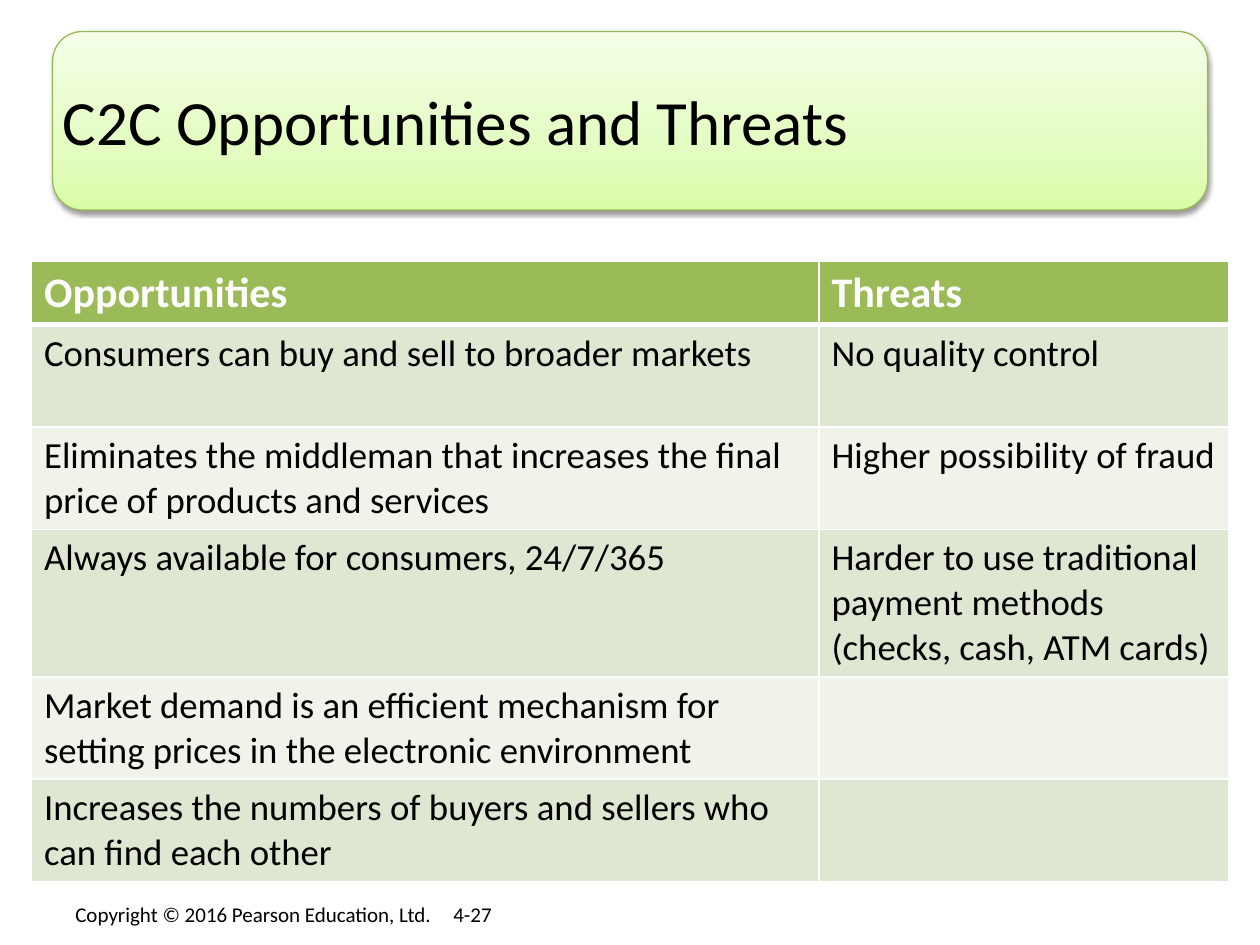
from copy import deepcopy

from lxml import etree
from pptx import Presentation
from pptx.dml.color import RGBColor
from pptx.enum.shapes import MSO_SHAPE
from pptx.enum.text import MSO_ANCHOR, MSO_AUTO_SIZE
from pptx.oxml.ns import qn
from pptx.util import Inches, Pt

ROUND = MSO_SHAPE.ROUNDED_RECTANGLE
MIDDLE = MSO_ANCHOR.MIDDLE
FIT = MSO_AUTO_SIZE.SHAPE_TO_FIT_TEXT

BLACK = RGBColor(0x00, 0x00, 0x00)
WHITE = RGBColor(0xFF, 0xFF, 0xFF)
GREEN = RGBColor(0x9B, 0xBB, 0x59)
EDGE = RGBColor(0x98, 0xB9, 0x55)
SAGE = RGBColor(0xDE, 0xE7, 0xD1)
PALE = RGBColor(0xEF, 0xF3, 0xEA)
GLOW = [(0, RGBColor(0xDA, 0xFD, 0xA7)),
        (0.35, RGBColor(0xE4, 0xFC, 0xC2)),
        (1, RGBColor(0xF5, 0xFF, 0xE7))]

HEADS = ["Opportunities", "Threats"]
POINTS = [
    ("Consumers can buy and sell to broader markets", "No quality control"),
    ("Eliminates the middleman that increases the final price of products and services",
     "Higher possibility of fraud"),
    ("Always available for consumers, 24/7/365",
     "Harder to use traditional payment methods (checks, cash, ATM cards)"),
    ("Market demand is an efficient mechanism for setting prices in the electronic environment", ""),
    ("Increases the numbers of buyers and sellers who can find each other", ""),
]


def add(node, tag, **attrs):
    return etree.SubElement(node, qn(tag), {key: str(val) for key, val in attrs.items()})


class Deck:
    """Hold the style and current slide, measured in quarter-inch grid units."""

    font = "Calibri"
    unit = 0.25

    def __init__(self, cols, rows):
        self.prs = Presentation()
        self.prs.slide_width = self.span(cols)
        self.prs.slide_height = self.span(rows)
        self.slide = self.prs.slides.add_slide(self.prs.slide_layouts[6])

    def span(self, count):
        return Inches(count * self.unit)

    def area(self, box):
        return [self.span(count) for count in box]

    def run(self, para, text, size, color, bold=False):
        run = para.add_run()
        run.text = text
        font = run.font
        font.name, font.size, font.bold = self.font, Pt(size), bold
        font.color.rgb = color

    def panel(self, box, stops, edge):
        shape = self.slide.shapes.add_shape(ROUND, *self.area(box))
        shape.fill.gradient()
        shape.fill.gradient_angle = 90
        nodes = shape._element.spPr.find(qn("a:gradFill")).find(qn("a:gsLst"))
        nodes.insert(1, deepcopy(nodes[0]))
        for stop, (place, color) in zip(shape.fill.gradient_stops, stops):
            stop.position, stop.color.rgb = place, color
        shape.line.color.rgb = edge
        shape.line.width = Pt(0.75)
        shape.shadow.inherit = False
        effects = shape._element.spPr.find(qn("a:effectLst"))
        shade = add(effects, "a:outerShdw", blurRad=Pt(3.1), dist=Pt(1.6),
                    dir=90 * 60000, rotWithShape=0)
        add(add(shade, "a:srgbClr", val=BLACK), "a:alpha", val=38000)

    def text(self, box, text, size, color):
        frame = self.slide.shapes.add_textbox(*self.area(box)).text_frame
        frame.word_wrap = True
        self.run(frame.paragraphs[0], text, size, color)
        return frame

    def title(self, box, text):
        frame = self.text(box, text, 36, BLACK)
        frame.vertical_anchor = MIDDLE
        frame.margin_left = frame.margin_right = 0
        frame.margin_top = frame.margin_bottom = 0

    def footer(self, box, text, stop):
        frame = self.text(box, text, 12, BLACK)
        frame.auto_size = FIT
        tabs = add(frame.paragraphs[0]._p.get_or_add_pPr(), "a:tabLst")
        add(tabs, "a:tab", pos=self.span(stop), algn="l")

    def border(self, cell, **widths):
        props = cell._tc.get_or_add_tcPr()
        for side in "LRTB":
            line = add(props, f"a:ln{side}", w=Pt(widths.get(side, 1)))
            add(add(line, "a:solidFill"), "a:srgbClr", val=WHITE)

    def cell(self, cell, text, size, color, fill, bold=False, **widths):
        self.border(cell, **widths)
        cell.fill.solid()
        cell.fill.fore_color.rgb = fill
        if text:
            self.run(cell.text_frame.paragraphs[0], text, size, color, bold)

    def table(self, left, top, widths, heights, heads, body):
        box = left, top, sum(widths), sum(heights)
        table = self.slide.shapes.add_table(
            len(heights), len(widths), *self.area(box)).table
        for col, width in zip(table.columns, widths):
            col.width = self.span(width)
        for row, height in zip(table.rows, heights):
            row.height = self.span(height)
        for col, text in enumerate(heads):
            self.cell(table.cell(0, col), text, 24, WHITE, GREEN, True, B=3)
        for row, texts in enumerate(body, 1):
            fill = SAGE if row % 2 else PALE
            above = 3 if row == 1 else 1
            for col, text in enumerate(texts):
                self.cell(table.cell(row, col), text, 21, BLACK, fill, T=above)

    def save(self):
        self.prs.save("out.pptx")


def main():
    deck = Deck(40, 30)
    deck.footer((2, 28.44, 36, 1.2), "Copyright © 2016 Pearson Education, Ltd. \t4-27", 12)
    deck.panel((1.67, 1, 36.67, 5.67), GLOW, EDGE)
    deck.title((2, 1.33, 36, 5), "C2C Opportunities and Threats")
    deck.table(1, 8.28, [25, 13], [2.03, 3.25, 3.25, 4.68, 3.25, 3.25], HEADS, POINTS)
    deck.save()


if __name__ == "__main__":
    main()
